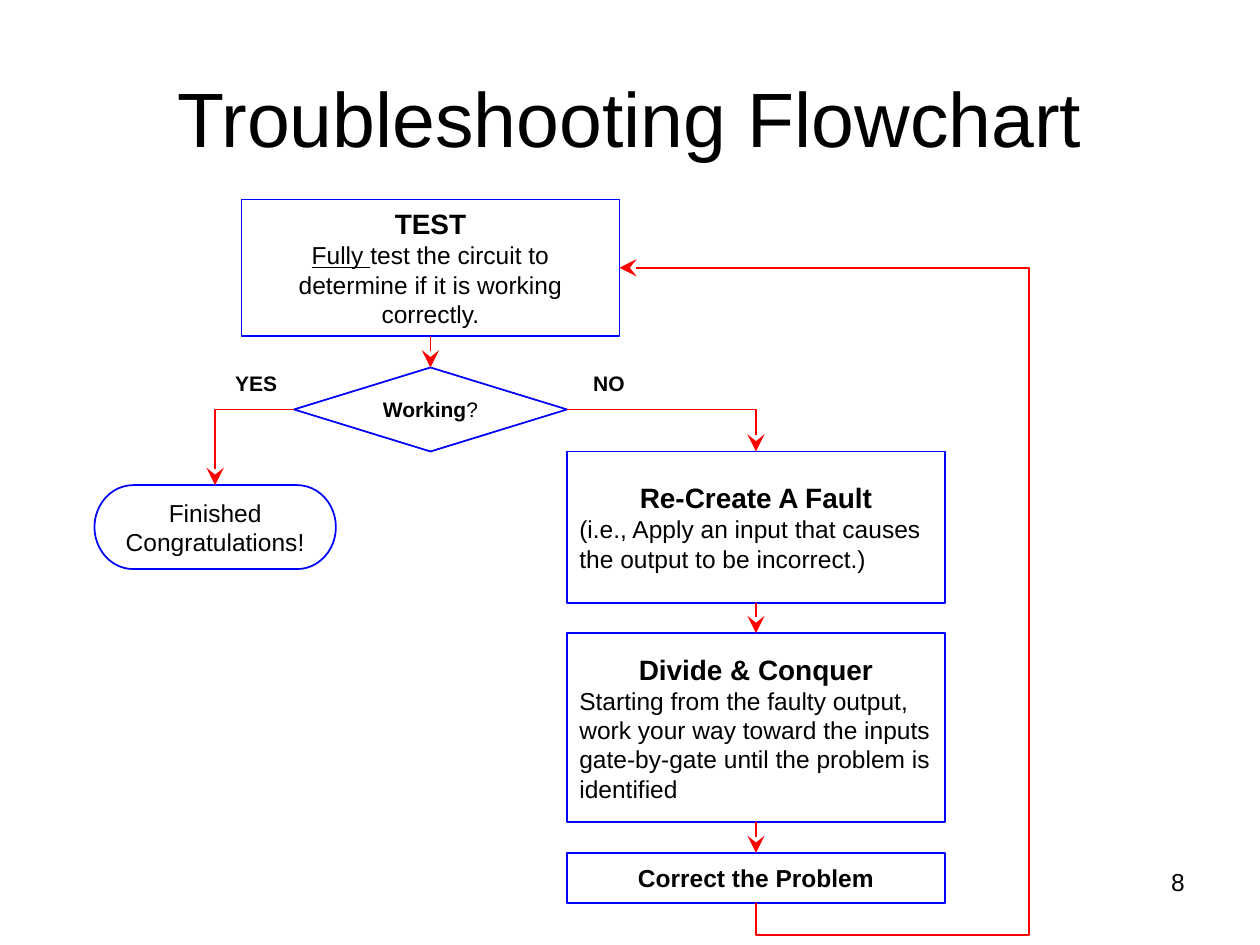
"""Build the troubleshooting flowchart slide."""
import pptx
import pptx.dml.color
import pptx.enum.shapes
import pptx.enum.text
import pptx.oxml.ns
import pptx.util
from lxml import etree

Pt = pptx.util.Pt
SHAPE = pptx.enum.shapes.MSO_SHAPE
CONNECTOR = pptx.enum.shapes.MSO_CONNECTOR
ALIGN = pptx.enum.text.PP_ALIGN
ANCHOR = pptx.enum.text.MSO_ANCHOR
qn = pptx.oxml.ns.qn

BLACK = pptx.dml.color.RGBColor(0, 0, 0)
BLUE = pptx.dml.color.RGBColor(0, 0, 255)
RED = pptx.dml.color.RGBColor(255, 0, 0)
FONT = "Arial"
C, L, R = ALIGN.CENTER, ALIGN.LEFT, ALIGN.RIGHT

TITLE = [(C, [("Troubleshooting Flowchart", 44, "")])]
PAGE_NUMBER = [(R, [("8", 14, "")])]
STEPS = {
    "test": (SHAPE.FLOWCHART_PROCESS, (138, 114, 216, 78), [
        (C, [("TEST", 16, "b")]),
        (C, [("Fully ", 14, "u"),
             ("test the circuit to determine if it is working correctly.", 14, "")])]),
    "working": (SHAPE.FLOWCHART_DECISION, (168, 210, 156, 48), [
        (C, [("Working", 12, "b"), ("?", 12, "")])]),
    "fault": (SHAPE.FLOWCHART_PROCESS, (324, 258, 216, 86.4), [
        (C, [("Re-Create A Fault", 16, "b")]),
        (L, [("(i.e., Apply an input that causes the output to be incorrect.)", 14, "")])]),
    "finished": (SHAPE.FLOWCHART_TERMINATOR, (54, 277.2, 138, 48), [
        (C, [("Finished", 14, "")]),
        (C, [("Congratulations!", 14, "")])]),
    "divide": (SHAPE.FLOWCHART_PROCESS, (324, 361.8, 216, 108), [
        (C, [("Divide & Conquer", 16, "b")]),
        (L, [("Starting from the faulty output, work your way toward the inputs "
              "gate-by-gate until the problem is identified", 14, "")])]),
    "correct": (SHAPE.FLOWCHART_PROCESS, (324, 487.4, 216, 28.8), [
        (C, [("Correct the Problem", 14, "b")])]),
}
LABELS = [("YES", 122.4), ("NO", 324)]
DOWN_ARROWS = [("test", "working"), ("fault", "divide"), ("divide", "correct")]
BRANCHES = [("left", "finished"), ("right", "fault")]
LOOP_DROP, LOOP_REACH = 18, 156


def write(shape, paragraphs, anchor=ANCHOR.MIDDLE):
    frame = shape.text_frame
    frame.word_wrap = True
    frame.vertical_anchor = anchor
    for index, (alignment, spans) in enumerate(paragraphs):
        para = frame.add_paragraph() if index else frame.paragraphs[0]
        para.alignment = alignment
        for text, size, style in spans:
            span = para.add_run()
            span.text = text
            span.font.name = FONT
            span.font.size = Pt(size)
            span.font.bold = "b" in style
            span.font.underline = "u" in style
            span.font.color.rgb = BLACK


def add_text(page, frame, paragraphs, anchor=ANCHOR.MIDDLE):
    write(page.shapes.add_textbox(*map(Pt, frame)), paragraphs, anchor)


def add_step(page, kind, frame, paragraphs):
    box = page.shapes.add_shape(kind, *map(Pt, frame))
    box.shadow.inherit = False
    box.fill.background()
    box.line.color.rgb = BLUE
    box.line.width = Pt(1)
    write(box, paragraphs)
    return box


def add_arrow(page, kind, start, end):
    arrow = page.shapes.add_connector(kind, *map(Pt, (*start, *end)))
    arrow.line.color.rgb = RED
    arrow.line.width = Pt(1)
    properties = arrow.element.spPr
    etree.SubElement(properties.find(qn("a:ln")), qn("a:tailEnd"),
                     type="stealth", w="lg", len="lg")
    etree.SubElement(properties, qn("a:effectLst"))
    return arrow


def bend(arrow, preset, *adjustments):
    geometry = arrow.element.spPr.find(qn("a:prstGeom"))
    geometry.set("prst", preset)
    guides = geometry.find(qn("a:avLst"))
    for number, value in enumerate(adjustments, 1):
        etree.SubElement(guides, qn("a:gd"), name=f"adj{number}",
                         fmla=f"val {round(value * 100000)}")


def side(name, where):
    left, top, width, height = STEPS[name][1]
    across, down = {"top": (0.5, 0), "left": (0, 0.5),
                    "bottom": (0.5, 1), "right": (1, 0.5)}[where]
    return left + width * across, top + height * down


def add_loop(page, start, end):
    rise, shift = start[1] - end[1], start[0] - end[0]
    middle_x, middle_y = (start[0] + end[0]) / 2, (start[1] + end[1]) / 2
    arrow = add_arrow(page, CONNECTOR.ELBOW,
                      (middle_x + rise / 2, middle_y - shift / 2),
                      (middle_x - rise / 2, middle_y + shift / 2))
    arrow.element.spPr.find(qn("a:xfrm")).set("rot", "5400000")
    bend(arrow, "bentConnector4", -LOOP_DROP / rise, -LOOP_REACH / shift)


def main():
    deck = pptx.Presentation()
    deck.slide_width, deck.slide_height = Pt(720), Pt(540)
    page = deck.slides.add_slide(deck.slide_layouts[5])
    title = page.shapes.title
    title.left, title.top, title.width, title.height = map(Pt, (36, 21.6, 648, 90))
    write(title, TITLE)
    add_text(page, (516, 492, 168, 37.4), PAGE_NUMBER, ANCHOR.TOP)

    boxes = {name: add_step(page, *step) for name, step in STEPS.items()}
    for upper, lower in DOWN_ARROWS:
        arrow = add_arrow(page, CONNECTOR.STRAIGHT,
                          side(upper, "bottom"), side(lower, "top"))
        arrow.begin_connect(boxes[upper], 2)
        arrow.end_connect(boxes[lower], 0)
    for where, target in BRANCHES:
        arrow = add_arrow(page, CONNECTOR.ELBOW,
                          side("working", where), side(target, "top"))
        bend(arrow, "bentConnector2")
    add_loop(page, side("correct", "bottom"), side("test", "right"))
    for label, left in LABELS:
        add_text(page, (left, 204, 48, 30), [(C, [(label, 12, "b")])])
    deck.save("out.pptx")


if __name__ == "__main__":
    main()
